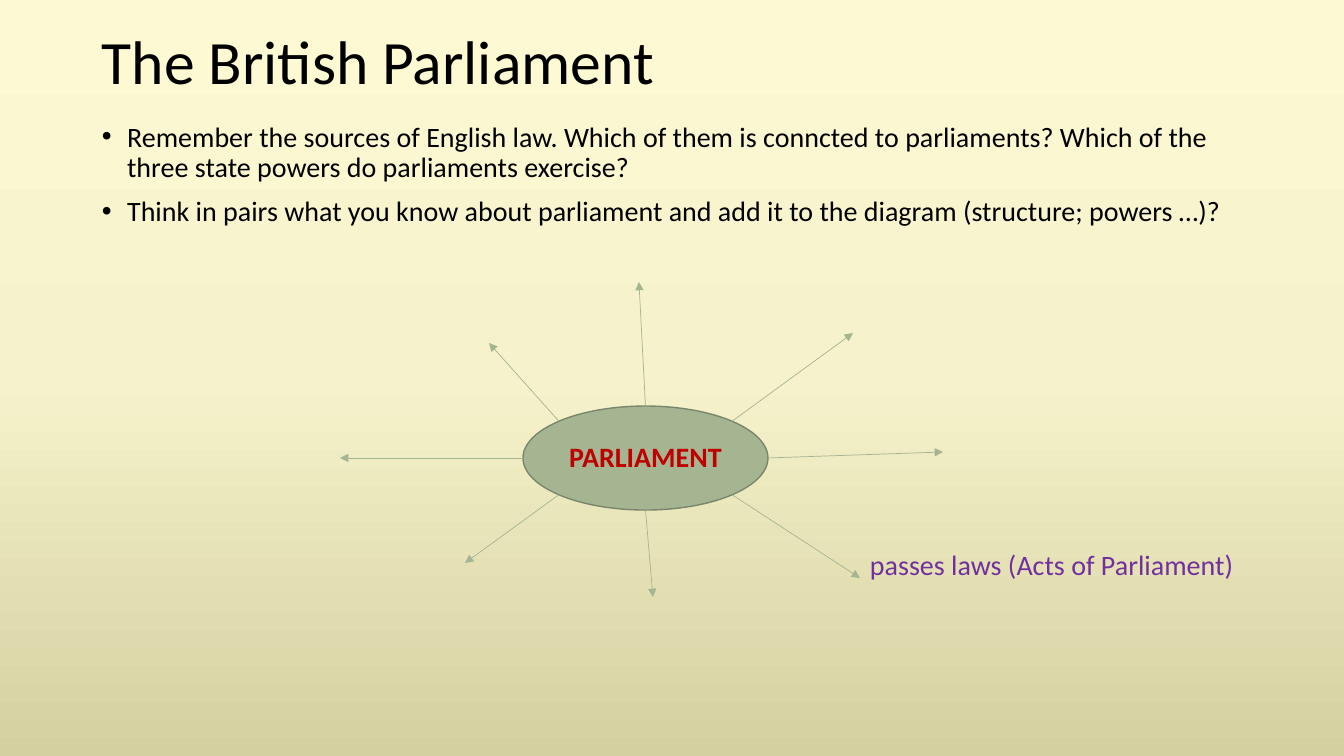
from copy import deepcopy
from math import cos, pi, sin

from lxml.etree import SubElement
from pptx import Presentation
from pptx.dml.color import RGBColor
from pptx.enum.shapes import MSO_CONNECTOR, MSO_SHAPE
from pptx.enum.text import MSO_ANCHOR, PP_ALIGN
from pptx.oxml.ns import qn
from pptx.util import Inches, Pt

EMU_PER_PX = Inches(1) / 100.8
BLANK_LAYOUT = 6


def px(length):
    return round(length * EMU_PER_PX)


def color(value):
    return RGBColor.from_string(value)


class Slide:
    font = "Calibri"
    ink = "000000"
    green = "A5B592"
    outline = "7A866C"

    def __init__(self, deck):
        self.page = deck.slides.add_slide(deck.slide_layouts[BLANK_LAYOUT])

    def background(self, stops):
        fill = self.page.background.fill
        fill.gradient()
        fill.gradient_angle = 270
        stop_list = self.page.element.find(".//" + qn("a:gsLst"))
        while len(stop_list) < len(stops):
            stop_list.append(deepcopy(stop_list[-1]))
        for stop, (position, value) in zip(fill.gradient_stops, stops):
            stop.position = position
            stop.color.rgb = color(value)

    def set_text(self, shape, text, size, ink, bold=False, anchor=MSO_ANCHOR.MIDDLE):
        frame = shape.text_frame
        frame.word_wrap = True
        frame.vertical_anchor = anchor
        frame.text = text
        for para in frame.paragraphs:
            para.line_spacing = 0.9
            for span in para.runs:
                span.font.name = self.font
                span.font.size = Pt(size)
                span.font.bold = bold
                span.font.color.rgb = color(ink)
        return frame

    def text(self, area, text, size, ink=ink, anchor=MSO_ANCHOR.MIDDLE):
        box = self.page.shapes.add_textbox(*map(px, area))
        return self.set_text(box, text, size, ink, anchor=anchor)

    def bullets(self, area, items, size):
        frame = self.text(area, "\n".join(items), size, anchor=MSO_ANCHOR.TOP)
        for para in frame.paragraphs:
            para.space_before = Pt(10)
            properties = para._p.get_or_add_pPr()
            properties.set("marL", str(Inches(0.25)))
            properties.set("indent", str(-Inches(0.25)))
            SubElement(properties, qn("a:buFont"), typeface="Arial")
            SubElement(properties, qn("a:buChar"), char="•")

    def ellipse(self, area, text, size, ink):
        shape = self.page.shapes.add_shape(MSO_SHAPE.OVAL, *map(px, area))
        shape.shadow.inherit = False
        shape.fill.solid()
        shape.fill.fore_color.rgb = color(self.green)
        shape.line.color.rgb = color(self.outline)
        shape.line.width = Pt(1)
        frame = self.set_text(shape, text, size, ink, bold=True)
        frame.paragraphs[0].alignment = PP_ALIGN.CENTER

    def arrow(self, start, tip):
        line = self.page.shapes.add_connector(
            MSO_CONNECTOR.STRAIGHT, *map(px, (*start, *tip)))
        line.line.color.rgb = color(self.green)
        line.line.width = Pt(0.5)
        SubElement(line.line._get_or_add_ln(), qn("a:tailEnd"), type="triangle")
        SubElement(line._element.spPr, qn("a:effectLst"))


def main():
    deck = Presentation()
    deck.slide_width, deck.slide_height = px(1344), px(756)
    slide = Slide(deck)
    slide.background([(0, "FDFAD3"), (0.5, "F6F2CB"), (1, "D4D0A0")])

    # Title and tasks
    slide.text((92, 23, 1159, 83), "The British Parliament", 44)
    slide.bullets((92, 118, 1159, 120), [
        "Remember the sources of English law. Which of them is conncted to "
        "parliaments? Which of the three state powers do parliaments exercise?",
        "Think in pairs what you know about parliament and add it to the "
        "diagram (structure; powers …)?",
    ], 20)

    # Mind map: centre, then arrows clockwise from the right
    left, top, width, height = hub = (523, 406, 245, 104)
    slide.ellipse(hub, "PARLIAMENT", 20, "C00000")
    tips = [(943, 452), (860, 578), (653, 597), (465, 563),
            (340, 458), (489, 343), (639, 282), (853, 333)]
    for number, tip in enumerate(tips):
        angle = 2 * pi * number / len(tips)
        start = (left + width / 2 * (1 + cos(angle)),
                 top + height / 2 * (1 + sin(angle)))
        slide.arrow(start, tip)

    # Example answer
    slide.text((860, 546, 390, 40), "passes laws (Acts of Parliament)", 20, "7030A0")

    deck.save("out.pptx")


if __name__ == "__main__":
    main()
